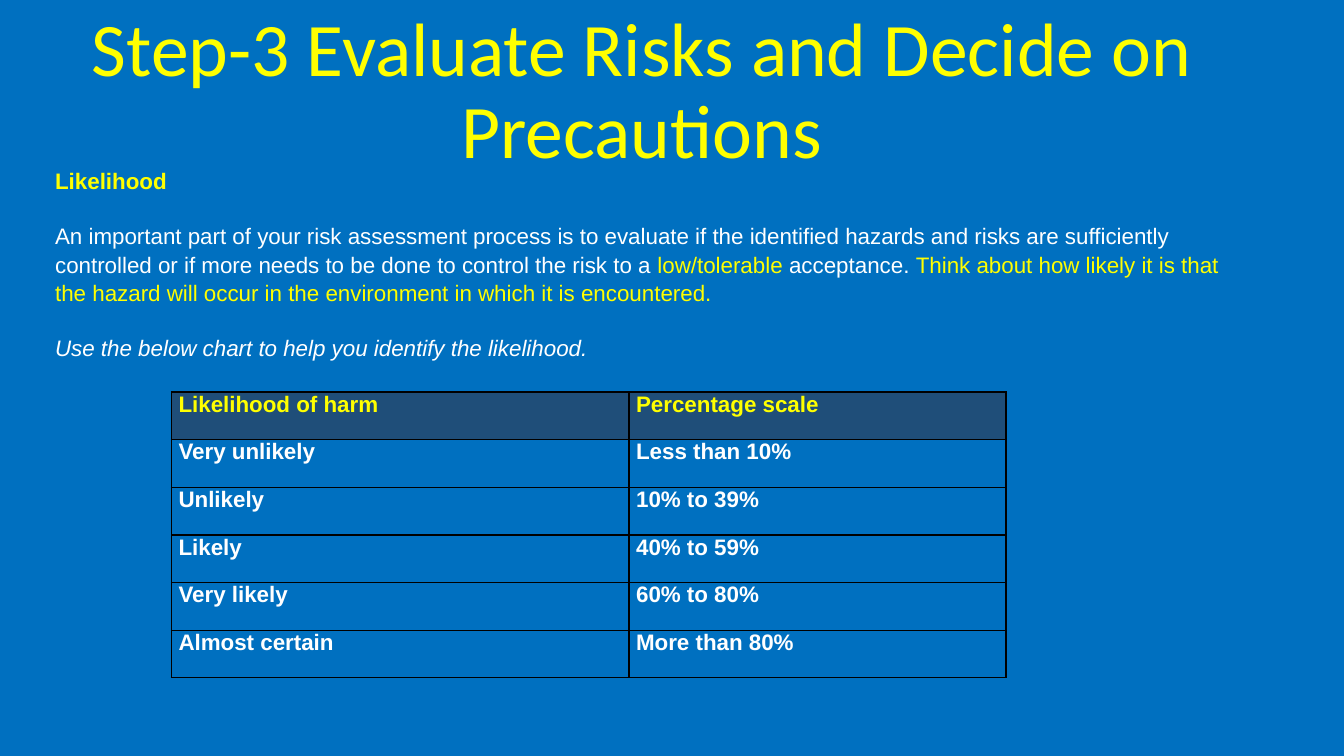
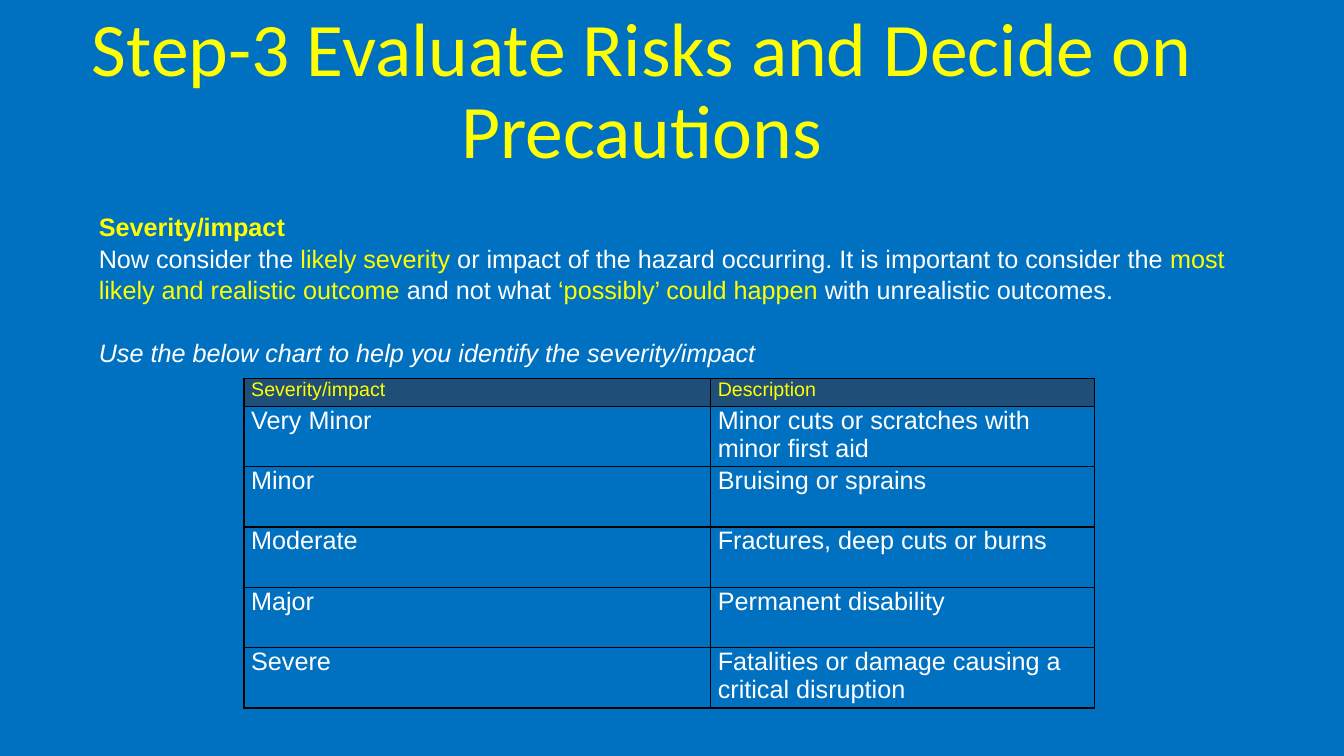
from dataclasses import dataclass

from lxml import etree
from pptx import Presentation
from pptx.dml.color import RGBColor
from pptx.enum.text import MSO_ANCHOR, MSO_AUTO_SIZE, PP_ALIGN
from pptx.oxml.ns import qn
from pptx.slide import Slide
from pptx.util import Cm, Pt

BOTTOM, TOP = MSO_ANCHOR.BOTTOM, MSO_ANCHOR.TOP
NO_AUTOSIZE = MSO_AUTO_SIZE.NONE
CENTER = PP_ALIGN.CENTER

COLORS = {
    "background": "0070C0",
    "highlight": "FFFF00",
    "text": "FFFFFF",
    "header": "1F4E79",
    "border": "000000",
}
TITLE = "Step-3 Evaluate Risks and Decide on Precautions"
TITLE_FONT, BODY_FONT = "Calibri", "Arial"
BODY_LINE_SPACING = 1.05
BORDER_WIDTH = Pt(1)
CELL_INSET = Cm(0.18)


@dataclass(frozen=True)
class Box:
    left: float
    top: float
    width: float
    height: float


@dataclass(frozen=True)
class Span:
    text: str
    highlighted: bool = False


@dataclass(frozen=True)
class TextBlock:
    spans: tuple[Span, ...]
    color: str = "text"
    bold: bool = False
    italic: bool = False
    space_before: float = 0


@dataclass(frozen=True)
class Body:
    box: Box
    size: int
    blocks: tuple[TextBlock, ...]


@dataclass(frozen=True)
class RiskTable:
    left: float
    top: float
    column_widths: tuple[float, ...]
    header_height: float
    row_height: float
    header_size: int
    row_size: int
    bold: bool
    rows: tuple[tuple[str, str], ...]


@dataclass(frozen=True)
class RiskSlide:
    body: Body
    table: RiskTable


TITLE_BOX = Box(1.57, 1.37, 29.21, 3.15)

RISK_SLIDES = (
    RiskSlide(
        Body(
            Box(1.14, 4.06, 30.25, 5.82),
            16,
            (
                TextBlock((Span("Likelihood"),), "highlight", bold=True),
                TextBlock(
                    (
                        Span(
                            "An important part of your risk assessment process is to evaluate if "
                            "the identified hazards and risks are sufficiently controlled or if "
                            "more needs to be done to control the risk to a "
                        ),
                        Span("low/tolerable ", True),
                        Span("acceptance. "),
                        Span(
                            "Think about how likely it is that the hazard will occur in the "
                            "environment in which it is encountered.",
                            True,
                        ),
                    ),
                    space_before=19.3,
                ),
                TextBlock(
                    (Span("Use the below chart to help you identify the likelihood."),),
                    italic=True,
                    space_before=19.3,
                ),
            ),
        ),
        RiskTable(
            4.32, 9.88, (11.53, 9.5), 1.2, 1.2, 16, 16, True,
            (
                ("Likelihood of harm", "Percentage scale"),
                ("Very unlikely", "Less than 10%"),
                ("Unlikely", "10% to 39%"),
                ("Likely", "40% to 59%"),
                ("Very likely", "60% to 80%"),
                ("Almost certain", "More than 80%"),
            ),
        ),
    ),
    RiskSlide(
        Body(
            Box(2.24, 5.16, 29.26, 4.11),
            18,
            (
                TextBlock((Span("Severity/impact"),), "highlight", bold=True),
                TextBlock(
                    (
                        Span("Now consider the "),
                        Span("likely severity ", True),
                        Span(
                            "or impact of the hazard occurring. "
                            "It is important to consider the "
                        ),
                        Span("most likely and realistic outcome ", True),
                        Span("and not what "),
                        Span("‘possibly’ could happen", True),
                        Span(" with unrealistic outcomes."),
                    ),
                ),
                TextBlock(
                    (Span("Use the below chart to help you identify the severity/impact"),),
                    italic=True,
                    space_before=21.7,
                ),
            ),
        ),
        RiskTable(
            6.15, 9.53, (11.76, 9.68), 0.71, 1.52, 14, 18, False,
            (
                ("Severity/impact", "Description"),
                ("Very Minor", "Minor cuts or scratches with minor first aid"),
                ("Minor", "Bruising or sprains"),
                ("Moderate", "Fractures, deep cuts or burns"),
                ("Major", "Permanent disability"),
                ("Severe", "Fatalities or damage causing a critical disruption"),
            ),
        ),
    ),
)


def rgb(name: str) -> RGBColor:
    return RGBColor.from_string(COLORS[name])


def style_font(font, name: str, size: int, color: str,
               bold: bool = False, italic: bool = False) -> None:
    font.name = name
    font.size = Pt(size)
    font.color.rgb = rgb(color)
    font.bold = bold
    font.italic = italic


def add_text_frame(slide: Slide, box: Box, anchor: MSO_ANCHOR):
    shape = slide.shapes.add_textbox(
        Cm(box.left), Cm(box.top), Cm(box.width), Cm(box.height)
    )
    text_frame = shape.text_frame
    text_frame.word_wrap = True
    text_frame.auto_size = NO_AUTOSIZE
    text_frame.vertical_anchor = anchor
    return text_frame


def add_title(slide: Slide) -> None:
    paragraph = add_text_frame(slide, TITLE_BOX, BOTTOM).paragraphs[0]
    paragraph.text = TITLE
    paragraph.alignment = CENTER
    paragraph.line_spacing = 0.9
    style_font(paragraph.font, TITLE_FONT, 54, "highlight")


def add_body(slide: Slide, body: Body) -> None:
    text_frame = add_text_frame(slide, body.box, TOP)
    for index, block in enumerate(body.blocks):
        paragraph = text_frame.add_paragraph() if index else text_frame.paragraphs[0]
        paragraph.line_spacing = BODY_LINE_SPACING
        paragraph.space_before = Pt(block.space_before)
        style_font(paragraph.font, BODY_FONT, body.size, block.color,
                   block.bold, block.italic)
        for span in block.spans:
            run = paragraph.add_run()
            run.text = span.text
            if span.highlighted:
                run.font.color.rgb = rgb("highlight")


def add_borders(cell) -> None:
    properties = cell._tc.get_or_add_tcPr()
    for side in ("lnL", "lnR", "lnT", "lnB"):
        line = etree.SubElement(properties, qn(f"a:{side}"), w=str(BORDER_WIDTH))
        fill = etree.SubElement(line, qn("a:solidFill"))
        etree.SubElement(fill, qn("a:srgbClr"), val=COLORS["border"])


def style_cell(cell, text: str, is_header: bool, risk_table: RiskTable) -> None:
    cell.margin_left = cell.margin_right = CELL_INSET
    cell.margin_top = cell.margin_bottom = 0
    add_borders(cell)
    if is_header:
        cell.fill.solid()
        cell.fill.fore_color.rgb = rgb("header")
    else:
        cell.fill.background()
    paragraph = cell.text_frame.paragraphs[0]
    paragraph.text = text
    style_font(
        paragraph.font,
        BODY_FONT,
        risk_table.header_size if is_header else risk_table.row_size,
        "highlight" if is_header else "text",
        risk_table.bold,
    )


def add_risk_table(slide: Slide, risk_table: RiskTable) -> None:
    row_count = len(risk_table.rows)
    height = risk_table.header_height + risk_table.row_height * (row_count - 1)
    table = slide.shapes.add_table(
        row_count,
        len(risk_table.column_widths),
        Cm(risk_table.left),
        Cm(risk_table.top),
        Cm(sum(risk_table.column_widths)),
        Cm(height),
    ).table
    table.first_row = table.horz_banding = False
    for column, width in zip(table.columns, risk_table.column_widths):
        column.width = Cm(width)
    for row_index, texts in enumerate(risk_table.rows):
        is_header = row_index == 0
        row = table.rows[row_index]
        row.height = Cm(risk_table.header_height if is_header else risk_table.row_height)
        for cell, text in zip(row.cells, texts):
            style_cell(cell, text, is_header, risk_table)


def main() -> None:
    presentation = Presentation()
    presentation.slide_width = Cm(33.87)
    presentation.slide_height = Cm(19.05)
    background = presentation.slide_master.background.fill
    background.solid()
    background.fore_color.rgb = rgb("background")
    blank_layout = presentation.slide_layouts[6]
    for risk_slide in RISK_SLIDES:
        slide = presentation.slides.add_slide(blank_layout)
        add_title(slide)
        add_body(slide, risk_slide.body)
        add_risk_table(slide, risk_slide.table)
    presentation.save("out.pptx")


if __name__ == "__main__":
    main()
